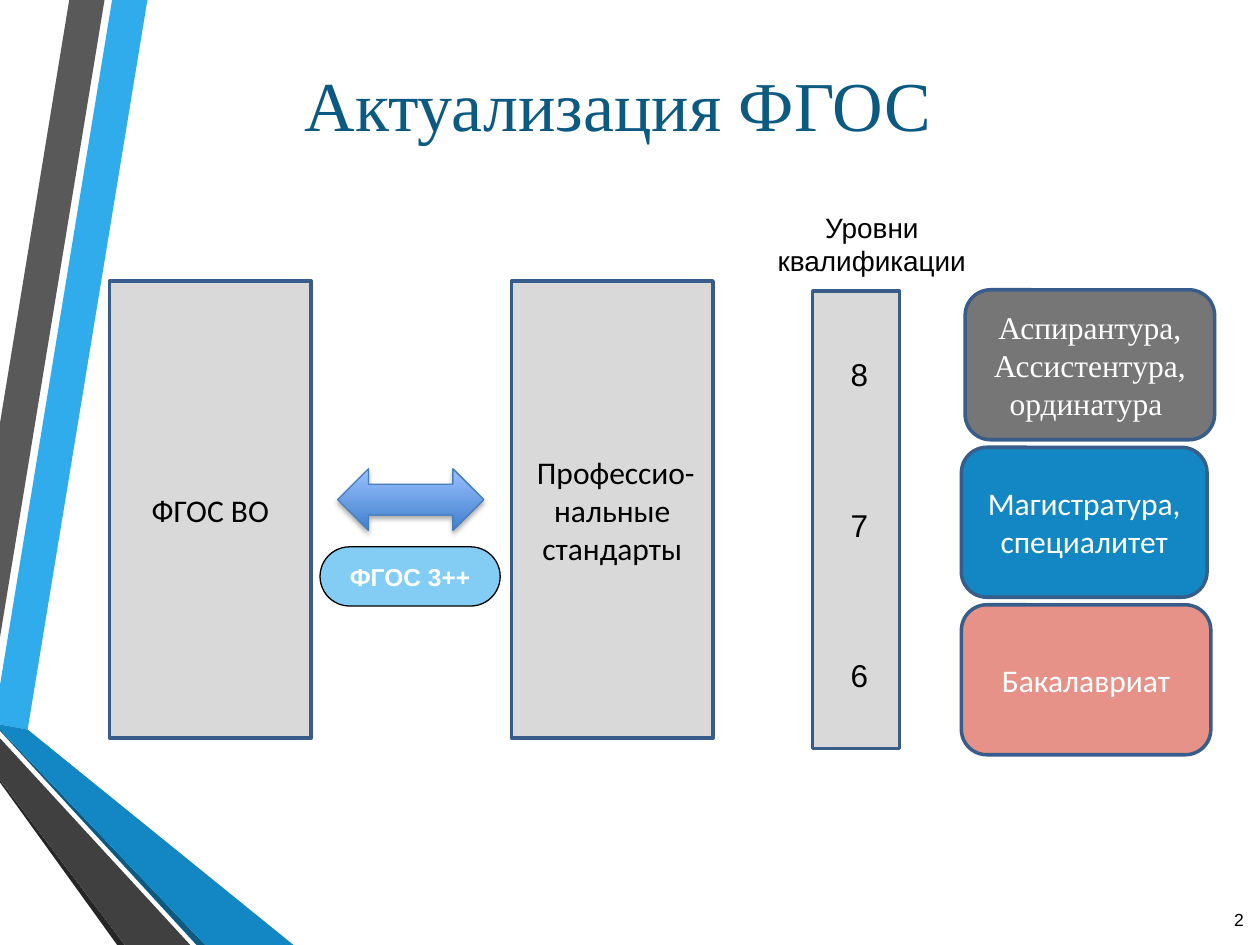
import lxml.etree
import pptx
import pptx.dml.color
import pptx.enum.shapes
import pptx.enum.text
import pptx.oxml
import pptx.oxml.ns
import pptx.util

Inches = pptx.util.Inches
Shapes = pptx.enum.shapes.MSO_SHAPE
Align = pptx.enum.text.PP_ALIGN
Anchor = pptx.enum.text.MSO_ANCHOR

BORDER = "385D8A"
PANEL = "D9D9D9"
NARROW_MARGINS = (0.04, 0.02)

RIBBONS = [
    ("30ACEC", [(0, 5.44), (0, 5.75), (0.22, 5.79), (1.17, 0), (0.89, 0)]),
    ("595959", [(0.83, 0), (0.55, 0), (0, 3.36), (0, 5.06)]),
    ("262626", [(0, 6.19), (0, 6.21), (0.93, 7.5), (0.99, 7.5)]),
    ("0C5A82", [(0, 5.79), (0, 5.8), (1.56, 7.5), (1.63, 7.5)]),
    ("1287C3", [(0, 5.79), (1.63, 7.5), (2.33, 7.5), (0.22, 5.79), (0, 5.75)]),
    ("404040", [(0, 6.19), (0.99, 7.5), (1.51, 7.5), (0, 5.86)]),
]

# Level, text, font, fill, left offset and width, from the top down
STAGES = [
    ("8", "Аспирантура,\nАссистентура,\vординатура ", "Times New Roman", "767676", 0.03, 1.98),
    ("7", "Магистратура, специалитет", "Calibri", "1287C3", 0, 1.95),
    ("6", "Бакалавриат", "Calibri", "E69289", 0, 1.98),
]


def rgb(color):
    return pptx.dml.color.RGBColor.from_string(color)


def write_text(shape, text, size=18, font="Arial", color="000000", bold=False,
               align=Align.CENTER, anchor=Anchor.MIDDLE, margins=(0.1, 0.05), wrap=True):
    frame = shape.text_frame
    frame.text = text
    frame.word_wrap = wrap
    frame.vertical_anchor = anchor
    frame.margin_left = frame.margin_right = Inches(margins[0])
    frame.margin_top = frame.margin_bottom = Inches(margins[1])
    for paragraph in frame.paragraphs:
        paragraph.alignment = align
        for run in paragraph.runs:
            run.font.size = pptx.util.Pt(size)
            run.font.name = font
            run.font.bold = bold
            run.font.color.rgb = rgb(color)


def add_label(slide, box, text, **text_format):
    shape = slide.shapes.add_textbox(*map(Inches, box))
    write_text(shape, text, **{"anchor": Anchor.TOP, **text_format})


def add_block(slide, kind, box, fill, line=BORDER, line_width=2, adjustments=()):
    shape = slide.shapes.add_shape(kind, *map(Inches, box))
    shape.shadow.inherit = False
    shape.fill.solid()
    shape.fill.fore_color.rgb = rgb(fill)
    shape.line.color.rgb = rgb(line)
    shape.line.width = pptx.util.Pt(line_width)
    for index, value in enumerate(adjustments):
        shape.adjustments[index] = value
    return shape


def add_ribbons(slide):
    for color, points in RIBBONS:
        corners = [(Inches(x), Inches(y)) for x, y in points]
        builder = slide.shapes.build_freeform(*corners[0])
        builder.add_line_segments(corners[1:], close=True)
        ribbon = builder.convert_to_shape()
        ribbon.shadow.inherit = False
        ribbon.fill.solid()
        ribbon.fill.fore_color.rgb = rgb(color)
        ribbon.line.fill.background()


def add_drop_shadow(shape, color, opacity, blur, distance):
    effects = shape.element.spPr.find(pptx.oxml.ns.qn("a:effectLst"))
    effects.append(pptx.oxml.parse_xml(
        f'<a:outerShdw {pptx.oxml.ns.nsdecls("a")} blurRad="{pptx.util.Pt(blur)}" '
        f'dist="{pptx.util.Pt(distance)}" dir="5400000" rotWithShape="0">'
        f'<a:srgbClr val="{color}"><a:alpha val="{opacity * 1000}"/></a:srgbClr>'
        '</a:outerShdw>'))


def add_standards(slide, left, top, width, height):
    """Two panels of standards, joined by a double arrow with its caption."""
    panel_width = 1.6
    panels = [(left, "ФГОС ВО"),
              (left + width - panel_width, " Профессио-нальные стандарты")]
    for panel_left, text in panels:
        panel = add_block(slide, Shapes.RECTANGLE,
                          (panel_left, top, panel_width, height), PANEL)
        write_text(panel, text, font="Calibri")

    arrow = add_block(slide, Shapes.LEFT_RIGHT_ARROW,
                      (left + 1.81, top + 1.49, 1.16, 0.49), "3F80CD",
                      "4A7EBB", 0.75, (0.5, 0.5))
    arrow.fill.gradient()
    arrow.fill.gradient_angle = 90
    for stop, color in zip(arrow.fill.gradient_stops, ("3F80CD", "9BC1FF")):
        stop.color.rgb = rgb(color)
    add_drop_shadow(arrow, "000000", opacity=35, blur=3.1, distance=1.8)

    caption = add_block(slide, Shapes.ROUNDED_RECTANGLE,
                        (left + 1.67, top + 2.11, 1.43, 0.47), "83CDF4",
                        "000000", 0.75, (0.5,))
    write_text(caption, "ФГОС 3++", size=14, color="FFFFFF", bold=True,
               margins=NARROW_MARGINS)


def add_qualifications(slide, left, top):
    """A scale of levels with the stage of education beside each level."""
    add_label(slide, (left, top, 2, 0.58), "Уровни квалификации", size=16,
              margins=NARROW_MARGINS)
    add_block(slide, Shapes.RECTANGLE, (left + 0.53, top + 0.66, 0.69, 3.63), PANEL)
    for row, (level, text, font, fill, offset, width) in enumerate(STAGES):
        add_label(slide, (left + 0.79, top + 1.15 + row * 1.195, 0.22, 0.34), level,
                  align=Align.LEFT, margins=NARROW_MARGINS, wrap=False)
        stage = add_block(slide, Shapes.ROUNDED_RECTANGLE,
                          (left + 1.71 + offset, top + 0.65 + row * 1.25, width, 1.19),
                          fill, adjustments=(0.17,))
        write_text(stage, text, font=font, color="FFFFFF")


def main():
    presentation = pptx.Presentation()
    presentation.slide_width = Inches(10)
    presentation.slide_height = Inches(7.5)
    slide = presentation.slides.add_slide(presentation.slide_layouts[6])

    add_ribbons(slide)
    add_label(slide, (2.32, 0.44, 5.22, 0.77), "Актуализация ФГОС", size=40,
              font="Times New Roman", color="0C5A82", align=Align.LEFT, wrap=False)
    add_standards(slide, 0.87, 2.23, 4.79, 3.63)
    add_qualifications(slide, 5.92, 1.65)
    add_label(slide, (9.5, 7.1, 0.47, 0.4), "2", size=10, align=Align.RIGHT,
              anchor=Anchor.MIDDLE)

    presentation.save("out.pptx")


if __name__ == "__main__":
    main()
